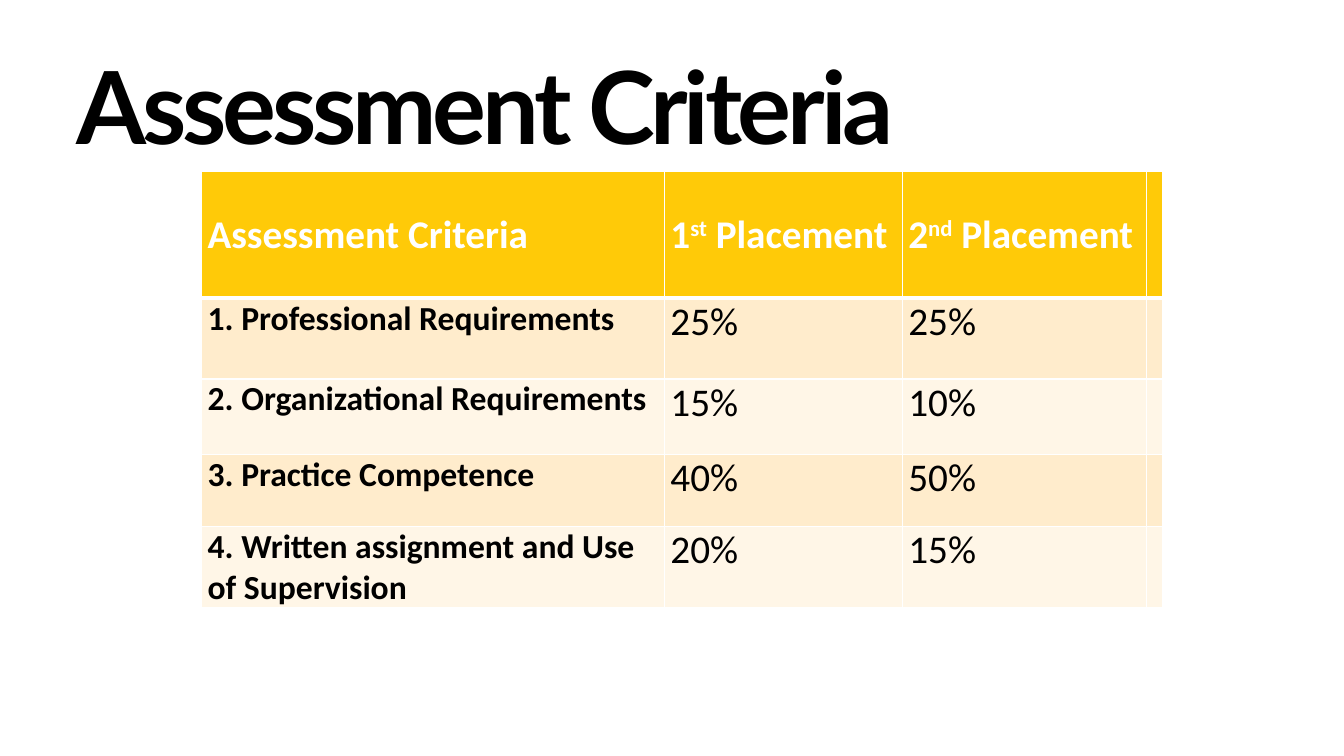
from dataclasses import dataclass

from lxml import etree
from pptx import Presentation
from pptx.dml.color import RGBColor
from pptx.enum.text import MSO_ANCHOR
from pptx.oxml.ns import qn
from pptx.table import _Cell
from pptx.text.text import TextFrame
from pptx.util import Inches, Pt

TOP = MSO_ANCHOR.TOP
MIDDLE = MSO_ANCHOR.MIDDLE

BLACK = RGBColor(0x00, 0x00, 0x00)
WHITE = RGBColor(0xFF, 0xFF, 0xFF)
GOLD = RGBColor(0xFF, 0xCA, 0x08)
PEACH = RGBColor(0xFF, 0xEC, 0xCC)
CREAM = RGBColor(0xFF, 0xF6, 0xE7)

COLUMN_WIDTHS = (4.59, 2.36, 2.42, 0.14)
HEADER_HEIGHT = 1.26


@dataclass(frozen=True)
class Criterion:
    name: str
    first_placement: str
    second_placement: str
    height: float


CRITERIA = (
    Criterion("1. Professional Requirements", "25%", "25%", 0.80),
    Criterion("2. Organizational Requirements", "15%", "10%", 0.75),
    Criterion("3. Practice Competence", "40%", "50%", 0.71),
    Criterion("4. Written assignment and Use of Supervision", "20%", "15%", 0.81),
)
HEADINGS = (
    ("Assessment Criteria",),
    ("1", "st", " Placement"),
    ("2", "nd", " Placement"),
    (),
)


def write(frame: TextFrame, *spans: str, size: float, color: RGBColor,
          font: str = "Calibri", bold: bool = False, spacing: int = 0,
          line_spacing: float = 1.0) -> None:
    """Write one paragraph; every second span is superscript."""
    para = frame.paragraphs[0]
    para.line_spacing = line_spacing
    for index, text in enumerate(spans):
        span = para.add_run()
        span.text = text
        span.font.name = font
        span.font.size = Pt(size)
        span.font.bold = bold
        span.font.color.rgb = color
        properties = span._r.get_or_add_rPr()
        if spacing:
            properties.set("spc", str(spacing))
        if index % 2:
            properties.set("baseline", "30000")


def style_cell(cell: _Cell, fill: RGBColor, anchor: MSO_ANCHOR,
               top: float = 1, bottom: float = 1) -> None:
    cell.margin_left = cell.margin_right = Inches(0.06)
    cell.margin_top = cell.margin_bottom = 0
    cell.vertical_anchor = anchor
    properties = cell._tc.get_or_add_tcPr()
    for edge, width in (("L", 1), ("R", 1), ("T", top), ("B", bottom)):
        line = etree.SubElement(properties, qn(f"a:ln{edge}"), w=str(Pt(width)))
        solid = etree.SubElement(line, qn("a:solidFill"))
        etree.SubElement(solid, qn("a:srgbClr"), val=str(WHITE))
    cell.fill.solid()
    cell.fill.fore_color.rgb = fill


def add_title(slide) -> None:
    box = slide.shapes.add_textbox(Inches(0.66), Inches(0.52), Inches(9.9), Inches(1.68))
    box.text_frame.word_wrap = True
    box.text_frame.vertical_anchor = TOP
    write(box.text_frame, "Assessment Criteria", size=72, color=BLACK, font="Lato",
          bold=True, spacing=-300, line_spacing=0.9)


def add_criteria_table(slide) -> None:
    heights = (HEADER_HEIGHT, *(criterion.height for criterion in CRITERIA))
    table = slide.shapes.add_table(
        len(heights), len(COLUMN_WIDTHS), Inches(2), Inches(1.7),
        Inches(sum(COLUMN_WIDTHS)), Inches(sum(heights))).table
    table.horz_banding = False
    for column, width in zip(table.columns, COLUMN_WIDTHS):
        column.width = Inches(width)
    for row, height in zip(table.rows, heights):
        row.height = Inches(height)

    for column, spans in enumerate(HEADINGS):
        cell = table.cell(0, column)
        style_cell(cell, GOLD, MIDDLE, bottom=3)
        write(cell.text_frame, *spans, size=28, color=WHITE, bold=True)

    for row, criterion in enumerate(CRITERIA, start=1):
        fill = PEACH if row % 2 else CREAM
        for column in range(len(COLUMN_WIDTHS)):
            style_cell(table.cell(row, column), fill, TOP, top=3 if row == 1 else 1)
        write(table.cell(row, 0).text_frame, criterion.name,
              size=24, color=BLACK, bold=True)
        shares = (criterion.first_placement, criterion.second_placement)
        for column, share in enumerate(shares, start=1):
            write(table.cell(row, column).text_frame, share, size=28, color=BLACK)


def main() -> None:
    deck = Presentation()
    deck.slide_width = Inches(13.33)
    deck.slide_height = Inches(7.5)
    slide = deck.slides.add_slide(deck.slide_layouts[6])
    add_title(slide)
    add_criteria_table(slide)
    deck.save("out.pptx")


if __name__ == "__main__":
    main()
